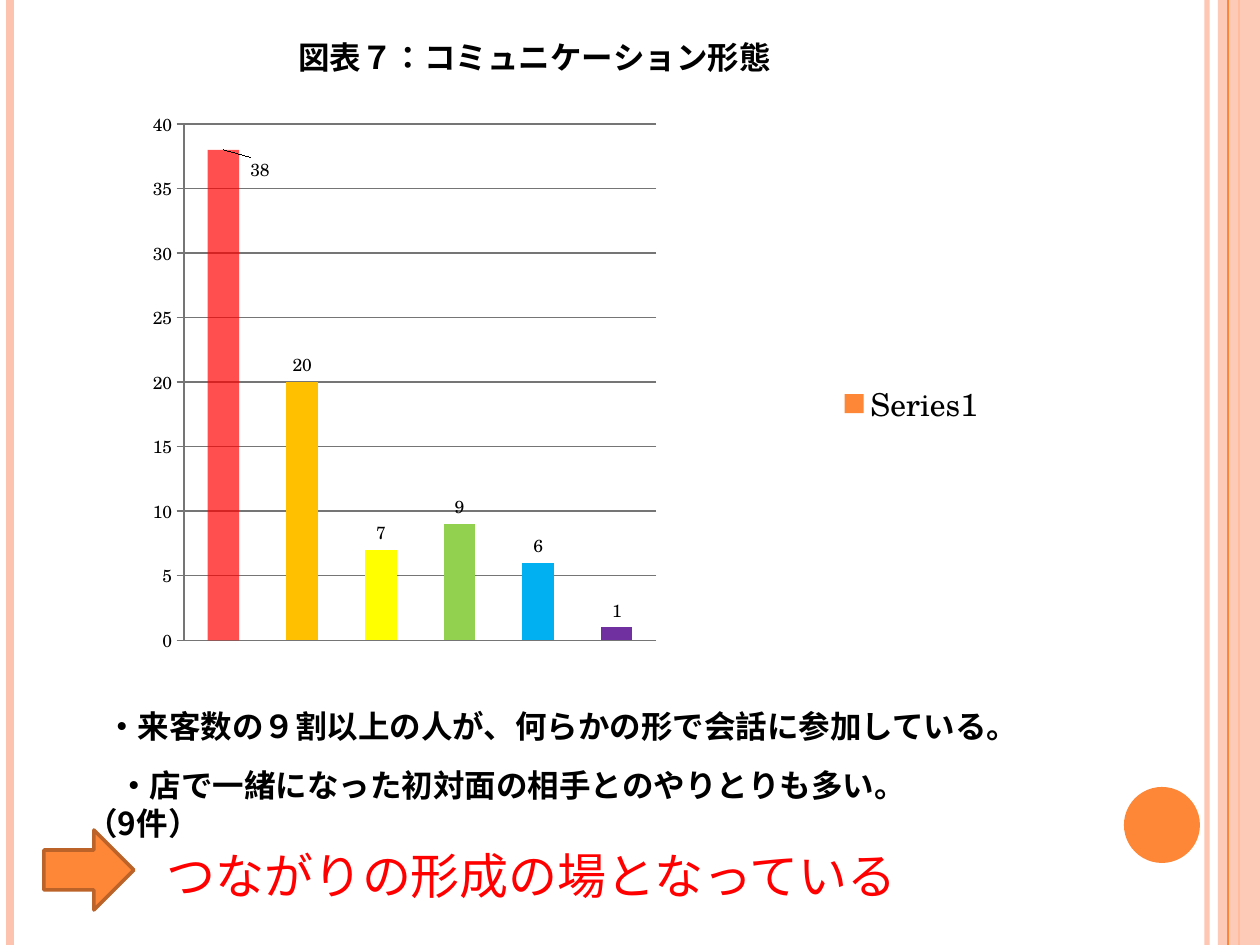
"""Build the slide on forms of communication: a column chart and its findings."""
from typing import NamedTuple

from lxml import etree
from pptx import Presentation
from pptx.chart.data import CategoryChartData
from pptx.dml.color import RGBColor
from pptx.enum import chart as ch, shapes, text
from pptx.oxml import parse_xml
from pptx.oxml.ns import nsdecls, qn
from pptx.util import Emu, Pt

PX = 914400 / 126
WIDE, HIGH = 1260, 945
SANS, SERIF = "Noto Sans CJK JP", "TeX Gyre Schola"
PINK, ORANGE, BLACK, GREY = "FEC3AE", "FE8637", "000000", "757575"


class Stripe(NamedTuple):
    x: int
    color: str
    width: float
    alpha: int = 100


class Shape(NamedTuple):
    kind: shapes.MSO_SHAPE
    box: tuple[int, int, int, int]
    fill: str
    alpha: int = 100
    edge: str = ""
    turn: int = 0


class Note(NamedTuple):
    words: str
    box: tuple[int, int, int, int]
    size: int = 18
    color: str = BLACK
    bold: bool = True
    indent: int = 0


class Bar(NamedTuple):
    value: int
    color: str
    alpha: int = 100


LEFT = [Stripe(1207, PINK, 3, 93), Stripe(10, PINK, 4.5), Stripe(1239, ORANGE, 1.5)]
BAND = Shape(shapes.MSO_SHAPE.RECTANGLE, (1218, 0, 42, HIGH), PINK, 87)
EDGE = Stripe(1228, ORANGE, 0.75)
DISC = Shape(shapes.MSO_SHAPE.OVAL, (1124, 787, 76, 76), ORANGE)
ARROW = Shape(shapes.MSO_SHAPE.DOWN_ARROW, (49, 825, 80, 90), ORANGE, edge="BC6329", turn=270)
BARS = [Bar(38, "FF0000", 69), Bar(20, "FFC000"), Bar(7, "FFFF00"),
        Bar(9, "92D050"), Bar(6, "00B0F0"), Bar(1, "7030A0")]
NOTES = [
    Note("・店で一緒になった初対面の相手とのやりとりも多い。（9件）", (74, 760, 853, 50), indent=32),
    Note("・来客数の９割以上の人が、何らかの形で会話に参加している。", (94, 701, 983, 50)),
    Note("つながりの形成の場となっている", (154, 839, 992, 72), 28, "FF0000", False),
]


def px(n: float) -> Emu:
    """Turn pixels into EMU."""
    return Emu(round(n * PX))


def paint(fmt, color: str, alpha: int = 100) -> None:
    """Give a fill a solid colour and an opacity in percent."""
    fmt.solid()
    fmt.fore_color.rgb = RGBColor.from_string(color)
    if alpha < 100:
        tone = fmt._xPr.find(qn("a:solidFill"))[0]
        etree.SubElement(tone, qn("a:alpha")).set("val", str(alpha * 1000))


def style(font, *, size: int, face: str, color: str = BLACK, bold: bool = False) -> None:
    """Set the look of a font."""
    font.size, font.name, font.bold = Pt(size), face, bold
    paint(font.fill, color)


def write(frame, words: str, *, indent: int = 0, **look) -> None:
    """Write one formatted paragraph into a text frame."""
    para = frame.paragraphs[0]
    run = para.add_run()
    run.text = words
    style(run.font, **look)
    latin = run.font._rPr.find(qn("a:latin"))
    latin.addnext(parse_xml(f'<a:ea {nsdecls("a")} typeface="{look["face"]}"/>'))
    if indent:
        para._p.get_or_add_pPr().set("indent", str(px(indent)))


def stripe(page, item: Stripe) -> None:
    """Draw a full-height vertical line."""
    line = page.shapes.add_connector(
        shapes.MSO_CONNECTOR.STRAIGHT, px(item.x), 0, px(item.x), px(HIGH))
    line.line.width = Pt(item.width)
    paint(line.line.fill, item.color, item.alpha)
    etree.SubElement(line._element.spPr, qn("a:effectLst"))


def draw(page, item: Shape) -> None:
    """Draw a preset shape."""
    form = page.shapes.add_shape(item.kind, *map(px, item.box))
    form.shadow.inherit = False
    form.rotation = item.turn
    paint(form.fill, item.fill, item.alpha)
    if item.edge:
        form.line.width = Pt(2)
        paint(form.line.fill, item.edge)
    else:
        form.line.fill.background()


def note(page, item: Note) -> None:
    """Add a wrapped line of text."""
    frame = page.shapes.add_textbox(*map(px, item.box)).text_frame
    frame.word_wrap = True
    frame.auto_size = text.MSO_AUTO_SIZE.SHAPE_TO_FIT_TEXT
    write(frame, item.words, indent=item.indent, size=item.size,
          face=SANS, color=item.color, bold=item.bold)


def place(node, slot: int, *, edge: bool = True, inner: bool = False, **spot: float) -> None:
    """Fix a chart part at fractions of the chart."""
    for old in node.findall(qn("c:layout")):
        node.remove(old)
    parts = ['<c:layoutTarget val="inner"/>'] if inner else []
    if edge:
        parts += [f'<c:{k}Mode val="edge"/>' for k in spot if k in "xy"]
    parts += [f'<c:{k} val="{v}"/>' for k, v in spot.items()]
    node.insert(slot, parse_xml(
        f'<c:layout {nsdecls("c")}><c:manualLayout>{"".join(parts)}</c:manualLayout></c:layout>'))


def graph(page) -> None:
    """Add the column chart with its title, axes, labels and legend."""
    data = CategoryChartData()
    data.categories = [str(n + 1) for n in range(len(BARS))]
    data.add_series("Series1", [bar.value for bar in BARS])
    chart = page.shapes.add_chart(
        ch.XL_CHART_TYPE.COLUMN_CLUSTERED, px(105), 0, px(1042), px(780), data).chart
    style(chart.font, size=10, face=SERIF)
    root = chart._chartSpace

    chart.has_title = True
    write(chart.chart_title.text_frame, "図表７：コミュニケーション形態", size=18, face=SANS, bold=True)
    place(root.xpath(".//c:title")[0], 1, x=0.18, y=0.03)
    place(root.xpath(".//c:plotArea")[0], 0, inner=True, x=0.076, y=0.159, w=0.453, h=0.662)

    chart.has_legend = True
    chart.legend.position = ch.XL_LEGEND_POSITION.TOP
    chart.legend.include_in_layout = False
    style(chart.legend.font, size=18, face=SERIF)
    place(root.xpath(".//c:legend")[0], 1, x=0.7, y=0.48)

    chart.category_axis.visible = False
    axis = chart.value_axis
    axis.minimum_scale, axis.maximum_scale, axis.major_unit = 0, 40, 5
    axis.major_tick_mark = ch.XL_TICK_MARK.CROSS
    axis.has_major_gridlines = True
    for line in (axis.format.line, axis.major_gridlines.format.line):
        line.width = Pt(0.75)
        paint(line.fill, GREY)

    plot = chart.plots[0]
    plot.gap_width, plot.vary_by_categories = 150, False
    row = plot.series[0]
    row.invert_if_negative = False
    paint(row.format.fill, ORANGE)
    for n, bar in enumerate(BARS):
        paint(row.points[n].format.fill, bar.color, bar.alpha)
    row.data_labels.show_value = True
    row.data_labels.position = ch.XL_LABEL_POSITION.OUTSIDE_END
    row.points[0].data_label.position = ch.XL_LABEL_POSITION.OUTSIDE_END
    place(root.xpath(".//c:dLbl")[0], 1, edge=False, x=0.035, y=0.048)


def main() -> None:
    """Build and save the deck."""
    deck = Presentation()
    deck.slide_width, deck.slide_height = px(WIDE), px(HIGH)
    page = deck.slides.add_slide(deck.slide_layouts[6])
    for item in LEFT:
        stripe(page, item)
    draw(page, BAND)
    stripe(page, EDGE)
    draw(page, DISC)
    graph(page)
    draw(page, ARROW)
    for item in NOTES:
        note(page, item)
    deck.save("out.pptx")


if __name__ == "__main__":
    main()
